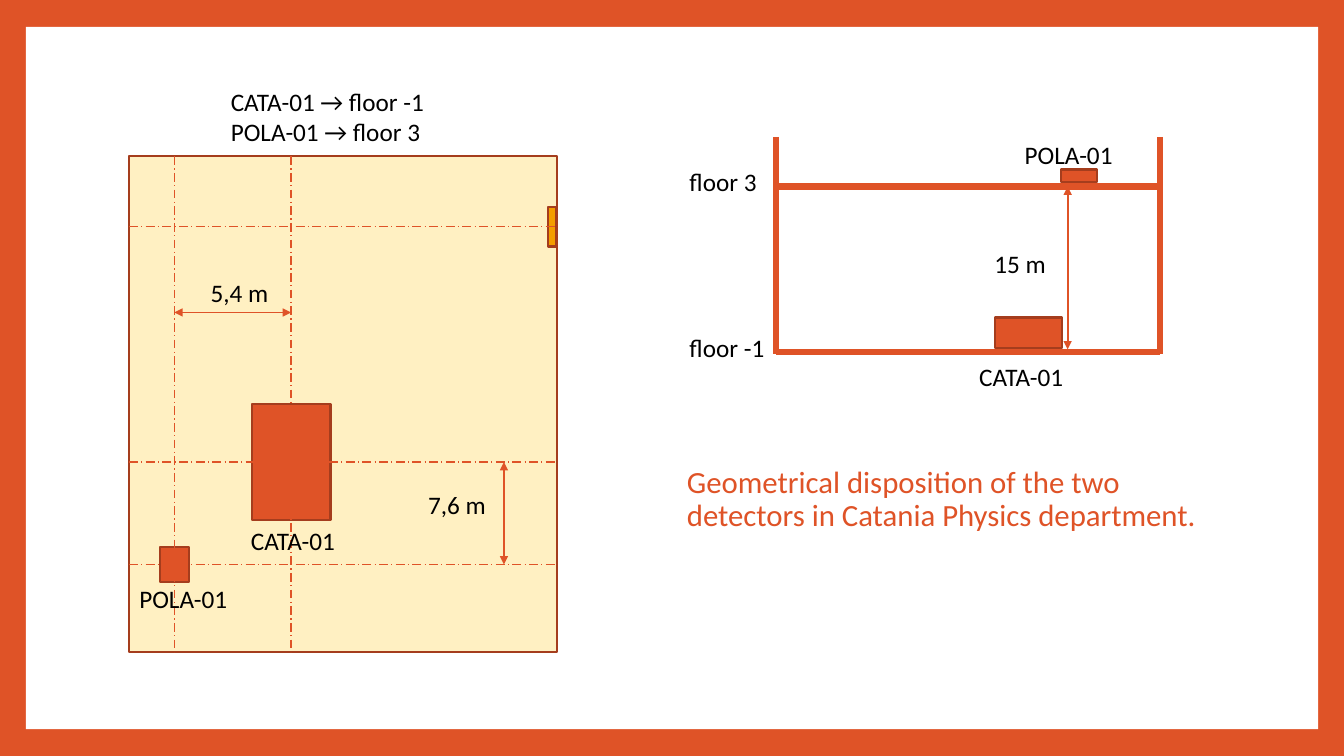
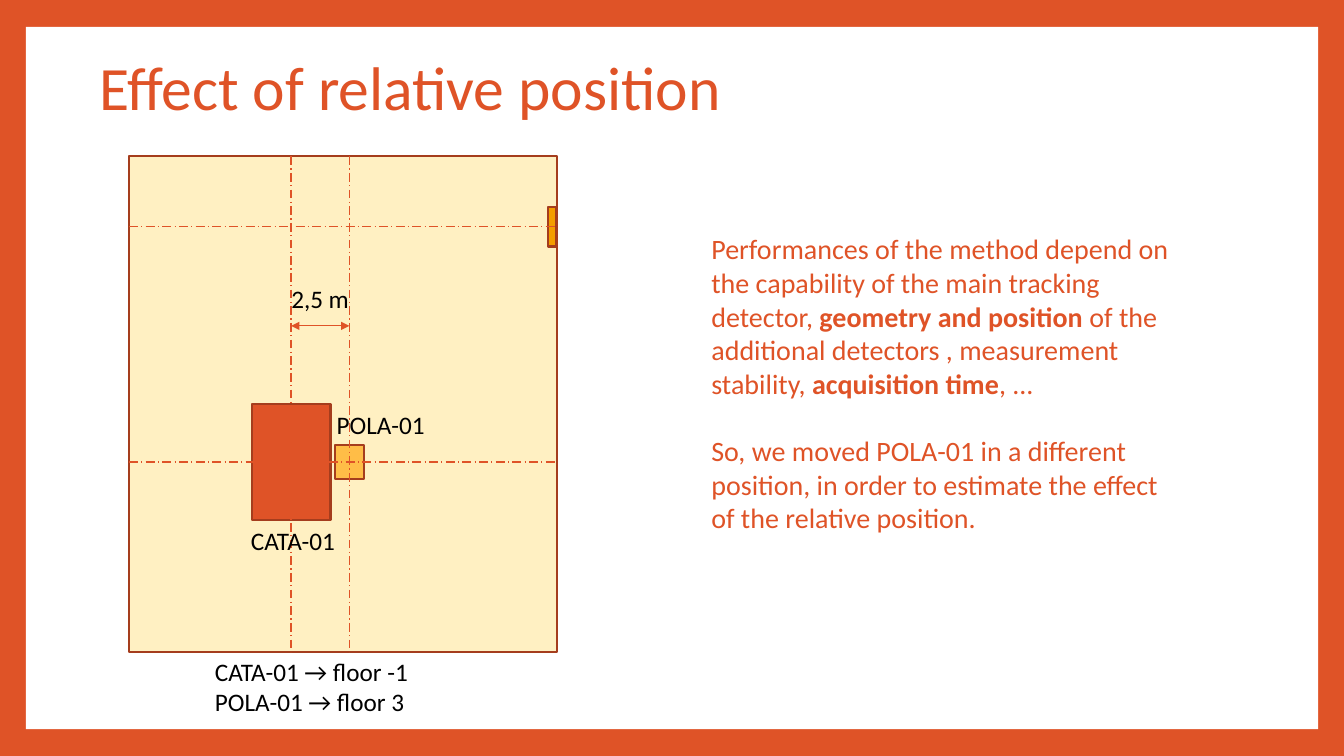
"""Build two slides on the placement of the CATA-01 and POLA-01 detectors."""
import pptx
import pptx.dml.color
import pptx.enum.dml
import pptx.enum.shapes
import pptx.enum.text
import pptx.oxml.ns
import pptx.util
from lxml import etree

COLORS = {
    "accent": "DF5327",
    "edge": "A53D1D",
    "paper": "FFFFFF",
    "room": "FFF0C2",
    "niche": "F49D00",
    "moved": "FFBD47",
    "ink": "000000",
}
FONT = "Calibri"
COLUMNS, ROWS = 160, 90
RECTANGLE = pptx.enum.shapes.MSO_SHAPE.RECTANGLE
RGB = {name: pptx.dml.color.RGBColor.from_string(value) for name, value in COLORS.items()}

prs = pptx.Presentation()
prs.slide_width = pptx.util.Inches(13.33)
prs.slide_height = pptx.util.Inches(7.5)
column, row = prs.slide_width / COLUMNS, prs.slide_height / ROWS


def write(slide, text, left, top, width=15, height=4.8, *, box=None, size=18,
          color="ink", line_spacing=1.0, gap=0):
    """Write lines of text; asterisks enclose bold words."""
    place = [int(n) for n in (left * column, top * row, width * column, height * row)]
    if box is None:
        box = slide.shapes.add_textbox(*place)
    box.left, box.top, box.width, box.height = place
    frame = box.text_frame
    frame.word_wrap = True
    frame.auto_size = pptx.enum.text.MSO_AUTO_SIZE.NONE
    frame.vertical_anchor = pptx.enum.text.MSO_ANCHOR.TOP
    for number, line in enumerate(text.split("\n")):
        paragraph = frame.add_paragraph() if number else frame.paragraphs[0]
        paragraph.alignment = pptx.enum.text.PP_ALIGN.LEFT
        paragraph.line_spacing = line_spacing
        paragraph.space_before = pptx.util.Pt(gap if number else 0)
        for part, words in enumerate(line.split("*")):
            run = paragraph.add_run()
            run.text = words
            run.font.name = FONT
            run.font.size = pptx.util.Pt(size)
            run.font.bold = part % 2 == 1
            run.font.color.rgb = RGB[color]


def draw_line(slide, x1, y1, x2, y2, weight=0.79, axis=False, arrows=False):
    """Draw a line, a dash-dot axis or a dimension with two arrowheads."""
    connector = slide.shapes.add_connector(
        pptx.enum.shapes.MSO_CONNECTOR.STRAIGHT,
        int(x1 * column), int(y1 * row), int(x2 * column), int(y2 * row))
    connector.line.color.rgb = RGB["accent"]
    connector.line.width = pptx.util.Pt(weight)
    if axis:
        connector.line.dash_style = pptx.enum.dml.MSO_LINE.LONG_DASH_DOT
    if arrows:
        outline = connector.line._get_or_add_ln()
        for end in ("a:headEnd", "a:tailEnd"):
            etree.SubElement(outline, pptx.oxml.ns.qn(end), type="triangle")
    etree.SubElement(connector.element.spPr, pptx.oxml.ns.qn("a:effectLst"))


layout_slide = prs.slides.add_slide(prs.slide_layouts.get_by_name("Blank"))
position_slide = prs.slides.add_slide(prs.slide_layouts.get_by_name("Title Only"))

background = prs.slide_master.background.fill
background.solid()
background.fore_color.rgb = RGB["accent"]

room_left, room_top, room_width, room_height = 15.36, 18.6, 51, 59
room_right, room_bottom = room_left + room_width, room_top + room_height
cata_x, cata_y = 34.65, 55
pola_x, pola_y = 20.75, 67.2
moved_x = 41.6
niche_y = 27
wall_left, wall_right = 92.4, 138.1
upper_floor, lower_floor = 22.2, 41.9

room = (room_left + room_width / 2, room_top + room_height / 2, room_width, room_height, "room")
niche = (room_right - 0.6, niche_y, 1, 4.7, "niche")
cata = (cata_x, cata_y, 9.4, 13.8, "accent")
blocks = [
    (layout_slide, COLUMNS / 2, ROWS / 2, 153.84, 83.6, "paper"),
    *[(slide, *block) for slide in prs.slides for block in (room, niche, cata)],
    (layout_slide, pola_x, pola_y, 3.5, 4.1, "accent"),
    (layout_slide, 128.5, 20.9, 4.3, 1.45, "accent"),
    (layout_slide, 122.4, 39.6, 8, 3.6, "accent"),
    (position_slide, moved_x, cata_y, 3.5, 4.1, "moved"),
]
for slide, center_x, center_y, width, height, color in blocks:
    block = slide.shapes.add_shape(
        RECTANGLE, int((center_x - width / 2) * column), int((center_y - height / 2) * row),
        int(width * column), int(height * row))
    block.shadow.inherit = False
    block.fill.solid()
    block.fill.fore_color.rgb = RGB[color]
    if color == "paper":
        block.line.fill.background()
        prs.slide_master.shapes.element.insert(2, block.element)
    else:
        block.line.color.rgb = RGB["edge"]
        block.line.width = pptx.util.Pt(1.5)

axes = [
    (layout_slide, (cata_x, pola_x), (niche_y, cata_y, pola_y)),
    (position_slide, (cata_x, moved_x), (niche_y, cata_y)),
]
for slide, verticals, horizontals in axes:
    for x in verticals:
        draw_line(slide, x, room_top, x, room_bottom, axis=True)
    for y in horizontals:
        draw_line(slide, room_left, y, room_right, y, axis=True)

for floor in (upper_floor, lower_floor):
    draw_line(layout_slide, wall_left, floor, wall_right, floor, weight=4.5)
for wall in (wall_left, wall_right):
    draw_line(layout_slide, wall, 16.3, wall, 42.2, weight=4.5)

draw_line(layout_slide, pola_x, 37.2, cata_x, 37.2, arrows=True)
draw_line(layout_slide, 60, cata_y, 60, pola_y, arrows=True)
draw_line(layout_slide, 127.1, upper_floor, 127.1, lower_floor - 0.3, weight=1.5, arrows=True)
draw_line(position_slide, cata_x, 38.8, moved_x, 38.8, arrows=True)

labels = [
    (layout_slide, "5,4 m", 23.9, 32.4),
    (layout_slide, "7,6 m", 49.8, 57.7),
    (layout_slide, "15 m", 117.2, 29),
    (layout_slide, "POLA-01", 15.4, 68.9),
    (layout_slide, "CATA-01", 28.7, 61.9),
    (layout_slide, "floor 3", 80.9, 19.2),
    (layout_slide, "floor -1", 80.9, 39),
    (layout_slide, "CATA-01", 115.4, 42.4),
    (layout_slide, "POLA-01", 120.8, 16),
    (position_slide, "2,5 m", 33.5, 33.2),
    (position_slide, "POLA-01", 38.9, 48.2),
    (position_slide, "CATA-01", 28.7, 61.9),
]
for slide, text, left, top in labels:
    write(slide, text, left, top)

for slide, left, top in ((layout_slide, 26.3, 9.7), (position_slide, 24.4, 77.5)):
    write(slide, "CATA-01 → floor -1\nPOLA-01 → floor 3", left, top, 33.7, 8.5)

write(layout_slide, "Geometrical disposition of the two detectors in Catania Physics department.",
      80.6, 55, 65.6, 9.2, size=22, color="accent", line_spacing=0.9)
write(position_slide, "Effect of relative position", 10.6, 6.2, 129.6, 17.8,
      box=position_slide.shapes.title, size=44, color="accent", line_spacing=0.9)
write(position_slide,
      "Performances of the method depend on the capability of the main tracking detector, "
      "*geometry and position* of the additional detectors , measurement stability, "
      "*acquisition time*, ...\n"
      "So, we moved POLA-01 in a different position, in order to estimate the effect "
      "of the relative position.",
      83.5, 27, 58.8, 41.2, size=20, color="accent", gap=24)

prs.save("out.pptx")
